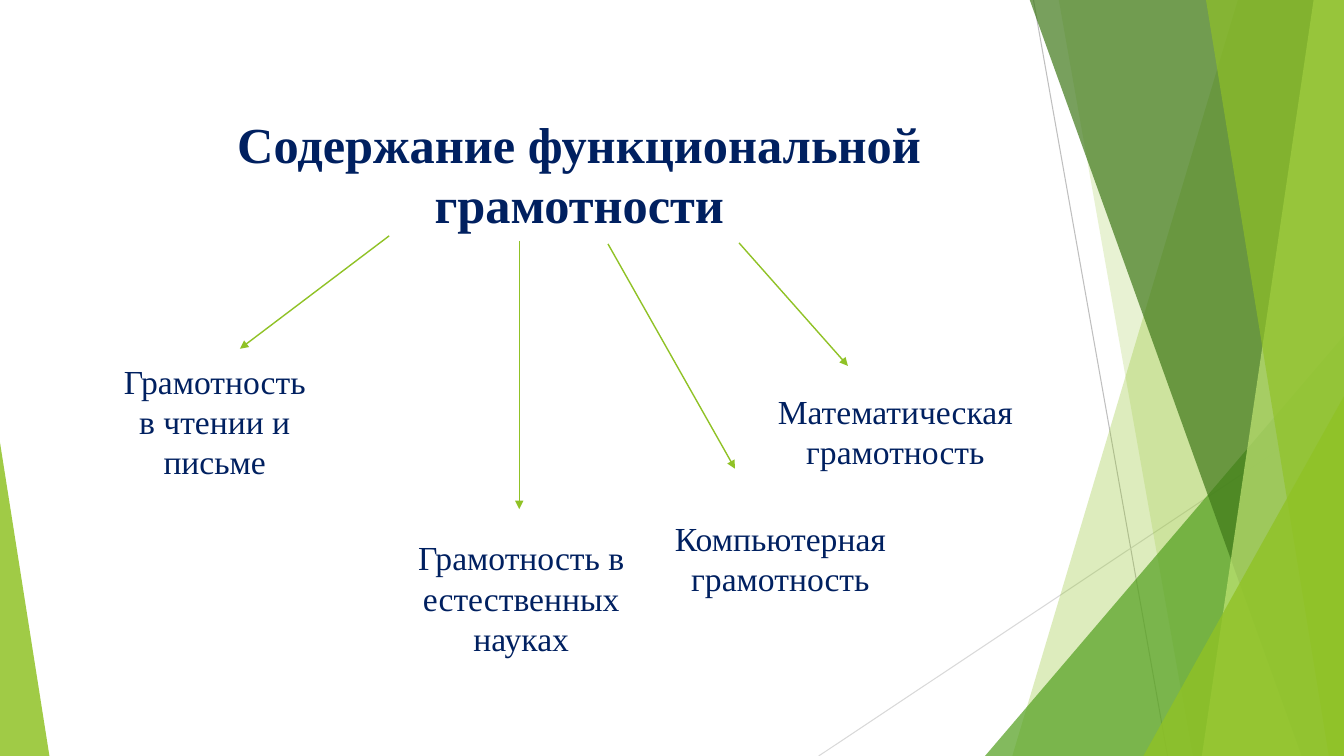
from lxml.etree import SubElement
from pptx import Presentation
from pptx.dml.color import RGBColor
from pptx.enum.shapes import MSO_CONNECTOR as Connector, MSO_SHAPE as Shape
from pptx.enum.text import MSO_ANCHOR as Anchor, PP_ALIGN as Align
from pptx.oxml.ns import qn
from pptx.util import Inches, Pt

COLORS = {
    "navy": "002060",
    "lime": "90C226",
    "pale lime": "C0E474",
    "green": "54A021",
    "dark green": "3F7819",
    "gray": "BFBFBF",
    "light gray": "D9D9D9",
}
FONT = "Times New Roman"
WIDTH, HEIGHT = 13.33, 7.5
BAND_TOP = -0.01


def color(name):
    return RGBColor.from_string(COLORS[name])


def paint(shape, fill, opacity):
    shape.shadow.inherit = False
    shape.line.fill.background()
    shape.fill.solid()
    shape.fill.fore_color.rgb = color(fill)
    tint = shape.fill._xPr.find(qn("a:solidFill"))[0]
    SubElement(tint, qn("a:alpha"), val=str(opacity * 1000))


def add_band(page, top_left, bottom_left, fill, opacity):
    builder = page.shapes.build_freeform(
        Inches(top_left), Inches(BAND_TOP), scale=1.0)
    corners = [(WIDTH, BAND_TOP), (WIDTH, HEIGHT), (bottom_left, HEIGHT)]
    builder.add_line_segments(
        [(Inches(x), Inches(y)) for x, y in corners], close=True)
    paint(builder.convert_to_shape(), fill, opacity)


def add_triangle(page, left, top, width, apex, fill, opacity):
    shape = page.shapes.add_shape(
        Shape.ISOSCELES_TRIANGLE, Inches(left), Inches(top),
        Inches(width), Inches(HEIGHT - top))
    shape.adjustments[0] = apex
    paint(shape, fill, opacity)


def add_line(page, start, end, stroke, weight, arrow=False):
    line = page.shapes.add_connector(
        Connector.STRAIGHT, *[Inches(value) for value in (*start, *end)])
    line.line.color.rgb = color(stroke)
    line.line.width = Pt(weight)
    if arrow:
        SubElement(line.line._get_or_add_ln(), qn("a:tailEnd"), type="triangle")
    SubElement(line._element.spPr, qn("a:effectLst"))


def add_text(page, text, area, size, bold=False, before=0, anchor=Anchor.TOP):
    box = page.shapes.add_textbox(*[Inches(value) for value in area])
    frame = box.text_frame
    frame.word_wrap = True
    frame.vertical_anchor = anchor
    para = frame.paragraphs[0]
    para.alignment = Align.CENTER
    para.space_before = Pt(before)
    span = para.add_run()
    span.text = text
    span.font.name = FONT
    span.font.size = Pt(size)
    span.font.bold = bold
    span.font.color.rgb = color("navy")


def add_backdrop(page):
    add_line(page, (10.25, 0), (11.58, HEIGHT), "gray", 0.75)
    add_line(page, (WIDTH, 4.03), (8.12, HEIGHT), "light gray", 0.75)
    add_band(page, 12.28, 10.04, "lime", 30)
    add_band(page, 10.5, 11.83, "lime", 20)
    add_triangle(page, 9.77, 3.33, 3.56, 1, "green", 72)
    add_band(page, 10.21, 12.91, "dark green", 70)
    add_band(page, 13.03, 11.92, "pale lime", 70)
    add_band(page, 11.96, 13.18, "lime", 65)
    add_triangle(page, 11.34, 3.93, 1.99, 1, "lime", 80)
    add_triangle(page, 0, 4.39, 0.49, 0, "lime", 85)


def main():
    deck = Presentation()
    deck.slide_width = Inches(WIDTH)
    deck.slide_height = Inches(HEIGHT)
    page = deck.slides.add_slide(deck.slide_layouts[6])
    add_backdrop(page)
    add_text(page, "Содержание функциональной грамотности",
             (0.87, 1.02, 9.75, 1.4), 36, bold=True, anchor=Anchor.MIDDLE)
    branches = [
        ("Грамотность в чтении и письме", (1.05, 3.53, 2.16),
         (3.86, 2.34), (2.38, 3.46)),
        ("Грамотность в естественных науках", (3.89, 5.28, 2.56),
         (5.15, 2.39), (5.15, 5.05)),
        ("Компьютерная грамотность", (6.4, 5.09, 2.68),
         (6.03, 2.42), (7.29, 4.65)),
        ("Математическая грамотность", (7.29, 3.83, 3.18),
         (7.33, 2.41), (8.41, 3.63)),
    ]
    for text, place, start, end in branches:
        add_text(page, text, (*place, 1.13), 24, before=10)
        add_line(page, start, end, "lime", 1, arrow=True)
    deck.save("out.pptx")


if __name__ == "__main__":
    main()
